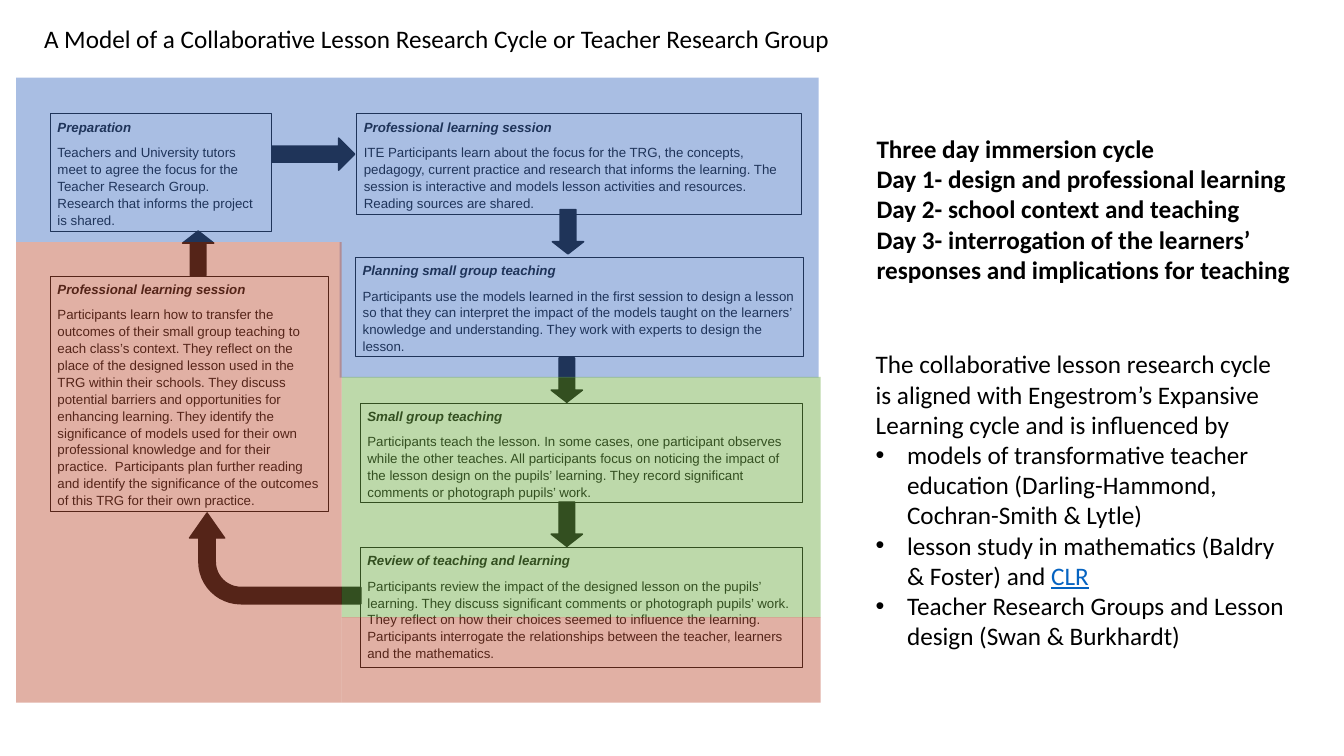
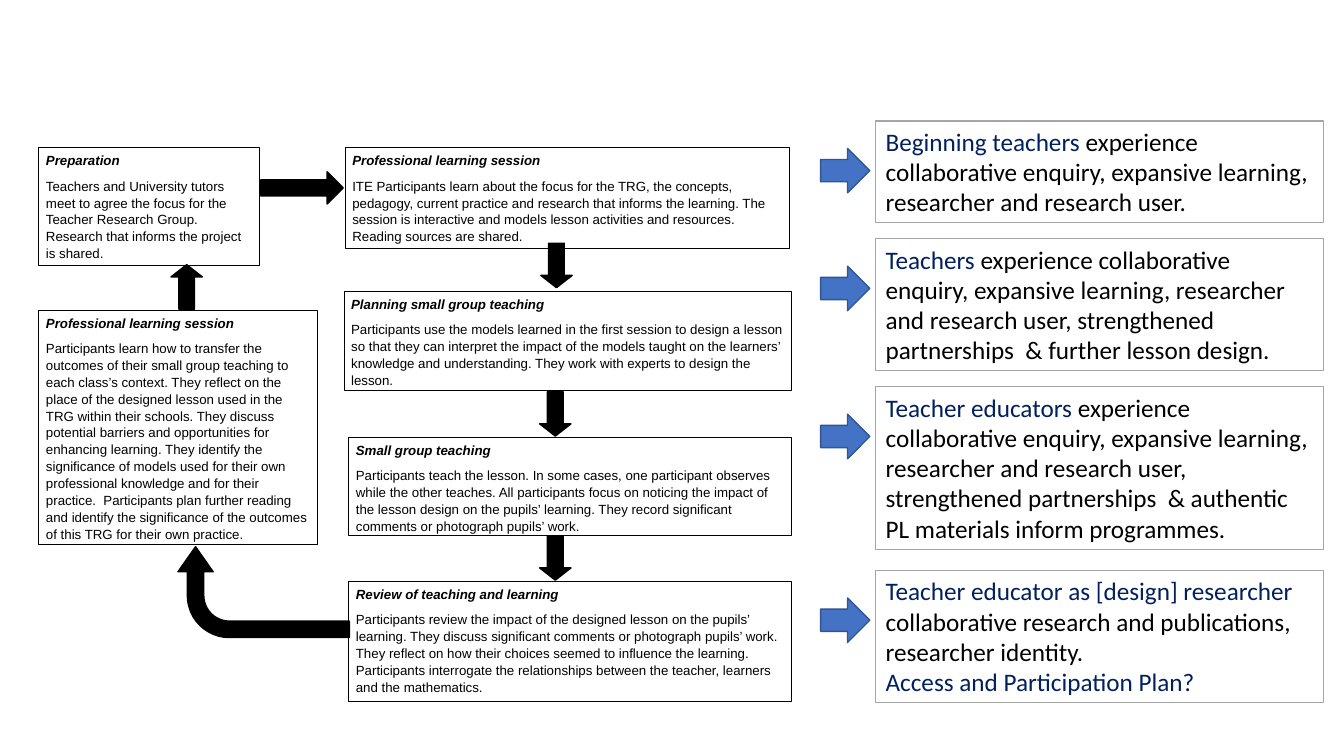
from pptx import Presentation, util as u
from pptx.dml.color import RGBColor
from pptx.enum import shapes, text
from pptx.oxml.ns import qn
from lxml import etree

Cm, Pt = u.Cm, u.Pt
SHAPE = shapes.MSO_SHAPE

COLORS = {
    "ink": "000000", "paper": "FFFFFF", "blue": "4472C4", "green": "70AD47",
    "red": "BD5137", "arrow_edge": "325491", "frame": "A6A6A6",
    "navy": "002060", "link": "0563C1",
}

SESSION = "Professional learning session"
STEPS = [
    ((0, 0, 5.56, 2.97), "Preparation",
     "Teachers and University tutors meet to agree the focus for the Teacher Research "
     "Group. Research that informs the project is shared."),
    ((7.72, 0, 11.2, 2.54), SESSION,
     "ITE Participants learn about the focus for the TRG, the concepts, pedagogy, current "
     "practice and research that informs the learning. The session is interactive and "
     "models lesson activities and resources. Reading sources are shared."),
    ((7.69, 3.62, 11.28, 2.49), "Planning small group teaching",
     "Participants use the models learned in the first session to design a lesson so that "
     "they can interpret the impact of the models taught on the learners’ knowledge and "
     "understanding. They work with experts to design the lesson."),
    ((7.81, 7.29, 11.15, 2.49), "Small group teaching",
     "Participants teach the lesson. In some cases, one participant observes while the "
     "other teaches. All participants focus on noticing the impact of the lesson design on "
     "the pupils’ learning. They record significant comments or photograph pupils’ work."),
    ((7.81, 10.93, 11.15, 3.02), "Review of teaching and learning",
     "Participants review the impact of the designed lesson on the pupils’ learning. They "
     "discuss significant comments or photograph pupils’ work.  They reflect on how their "
     "choices seemed to influence the learning. Participants interrogate the relationships "
     "between the teacher, learners and the mathematics."),
    ((0, 4.09, 7.01, 5.92), SESSION,
     "Participants learn how to transfer the outcomes of their small group teaching to each "
     "class’s context. They reflect on the place of the designed lesson used in the TRG "
     "within their schools. They discuss potential barriers and opportunities for enhancing "
     "learning. They identify the significance of models used for their own professional "
     "knowledge and for their practice.  Participants plan further reading and identify the "
     "significance of the outcomes of this TRG for their own practice."),
]

HEAD = (0.5, 0.391)
CYCLE_ARROWS = [
    (SHAPE.RIGHT_ARROW, (5.59, 0.61, 2.08, 0.81), (), 0),
    (SHAPE.DOWN_ARROW, (12.65, 2.41, 0.79, 1.12), HEAD, 0),
    (SHAPE.DOWN_ARROW, (12.62, 6.15, 0.79, 1.12), HEAD, 0),
    (SHAPE.DOWN_ARROW, (12.62, 9.78, 0.79, 1.12), HEAD, 0),
    (SHAPE.UP_ARROW, (3.33, 2.95, 0.79, 1.12), HEAD, 0),
    (SHAPE.BENT_ARROW, (4.52, 9.04, 2.29, 4.32), (0.181, 0.194, 0.276, 0.463), 270),
]

BANDS = [
    ((0.41, 1.96, 20.22, 4.14), "blue", 46),
    ((8.56, 6.1, 12.07, 3.42), "blue", 46),
    ((8.61, 9.5, 12.07, 6.06), "green", 46),
    ((8.61, 15.55, 12.07, 2.16), "red", 45),
    ((0.41, 6.1, 8.2, 11.61), "red", 45),
]

DAYS = [
    "Three day immersion cycle",
    "Day 1- design and professional learning",
    "Day 2- school context and teaching",
    "Day 3- interrogation of the learners’ responses and implications for teaching",
]
INTRO = ("The collaborative lesson research cycle is aligned with Engestrom’s Expansive "
         "Learning cycle and is influenced by")
INFLUENCES = [
    [("models of transformative teacher education (Darling-Hammond, "
      "Cochran-Smith & Lytle)", "ink")],
    [("lesson study in mathematics (Baldry & Foster) and ", "ink"), ("CLR", "link")],
    [("Teacher Research Groups and Lesson design (Swan & Burkhardt)", "ink")],
]

OUTCOMES = [
    (3.05, 2.57, [[("Beginning teachers ", "navy"),
                   ("experience collaborative enquiry, expansive learning, researcher and "
                    "research user.", "ink")]]),
    (6.02, 3.33, [[("Teachers", "navy"),
                   (" experience collaborative enquiry, expansive learning, researcher and "
                    "research user, strengthened partnerships  & further lesson design.",
                    "ink")]]),
    (9.75, 4.11, [[("Teacher educators ", "navy"),
                   ("experience collaborative enquiry, expansive learning, researcher and "
                    "research user, strengthened partnerships  & authentic PL materials "
                    "inform programmes.", "ink")]]),
    (14.38, 3.33, [[("Teacher educator as [design] researcher ", "navy"),
                    ("collaborative research and publications, researcher identity.", "ink")],
                   [("Access and Participation Plan?", "navy")]]),
]


def rgb(name):
    return RGBColor.from_string(COLORS[name])


def lengths(box):
    return [Cm(v) for v in box]


class Deck:
    def __init__(self):
        self.prs = Presentation()
        self.prs.slide_width, self.prs.slide_height = Cm(33.87), Cm(19.05)
        self.s = None

    def slide(self):
        self.s = self.prs.slides.add_slide(self.prs.slide_layouts[6])

    def shape(self, kind, box, fill=None, line=None, width=1, adj=(), alpha=None):
        sp = self.s.shapes.add_shape(kind, *lengths(box))
        sp.shadow.inherit = False
        for i, value in enumerate(adj):
            sp.adjustments[i] = value
        if fill:
            sp.fill.solid()
            sp.fill.fore_color.rgb = rgb(fill)
        else:
            sp.fill.background()
        if line:
            sp.line.color.rgb = rgb(line)
            sp.line.width = Pt(width)
        else:
            sp.line.fill.background()
        if alpha:
            clr = sp.fill._xPr.find(qn("a:solidFill"))[0]
            etree.SubElement(clr, qn("a:alpha")).set("val", str(alpha * 1000))
        return sp

    def paragraph(self, tf, i, runs, size=18, font="Calibri", bold=False, italic=False):
        p = tf.paragraphs[0] if i == 0 else tf.add_paragraph()
        p.alignment = text.PP_ALIGN.LEFT
        p.font.size, p.font.name = Pt(size), font
        p.font.bold, p.font.italic = bold, italic
        if len(runs) == 1:
            p.font.color.rgb = rgb(runs[0][1])
        for words, color in runs:
            r = p.add_run()
            r.text = words
            if len(runs) > 1:
                r.font.color.rgb = rgb(color)
            if color == "link":
                r.font.underline = True
        return p

    def bullet(self, p):
        pPr = p._p.get_or_add_pPr()
        pPr.set("marL", str(Cm(0.79)))
        pPr.set("indent", str(-Cm(0.79)))
        font, char = (etree.Element(qn(tag)) for tag in ("a:buFont", "a:buChar"))
        font.set("typeface", "Arial")
        char.set("char", "•")
        pPr.find(qn("a:defRPr")).addprevious(font)
        font.addnext(char)

    def frame(self, sp):
        tf = sp.text_frame
        tf.word_wrap = True
        tf.vertical_anchor = text.MSO_ANCHOR.TOP
        return tf

    def prose(self, sp, paragraphs, bold=False, bullets_from=None):
        tf = self.frame(sp)
        tf.auto_size = text.MSO_AUTO_SIZE.SHAPE_TO_FIT_TEXT
        for i, runs in enumerate(paragraphs):
            p = self.paragraph(tf, i, runs, bold=bold)
            if bullets_from is not None and i >= bullets_from:
                self.bullet(p)

    def textbox(self, box, paragraphs, **style):
        self.prose(self.s.shapes.add_textbox(*lengths(box)), paragraphs, **style)

    def step(self, box, title, body):
        tf = self.frame(self.shape(SHAPE.RECTANGLE, box, "paper", "ink", 0.5))
        tf.margin_left = tf.margin_right = Cm(0.18)
        tf.margin_top = tf.margin_bottom = Cm(0.1)
        for i, words in enumerate((title, body)):
            p = self.paragraph(tf, i, [(words, "ink")], 9.5, "Arial", i == 0, i == 0)
            p.line_spacing, p.space_after = 1.06, Pt(6)

    def cycle(self, left, top):
        def place(box):
            x, y, w, h = box
            return left + x, top + y, w, h

        for box, title, body in STEPS:
            self.step(place(box), title, body)
        for kind, box, adj, turn in CYCLE_ARROWS:
            self.shape(kind, place(box), "ink", "ink", adj=adj).rotation = turn

    def outcome(self, top, height, paragraphs):
        self.shape(SHAPE.RIGHT_ARROW, (20.68, top + 0.69, 1.24, 1.12), "blue", "arrow_edge")
        sp = self.shape(SHAPE.RECTANGLE, (22.07, top, 11.28, height), None, "frame", 0.75)
        self.prose(sp, paragraphs)


def main():
    deck = Deck()

    deck.slide()
    deck.cycle(1.27, 2.87)
    deck.textbox((21.82, 8.66, 10.82, 7.95), [[(INTRO, "ink")]] + INFLUENCES, bullets_from=1)
    deck.textbox((0.86, 0.46, 23.14, 1.02), [[(
        "A Model of a Collaborative Lesson Research Cycle or Teacher Research Group", "ink")]])
    for box, color, alpha in BANDS:
        deck.shape(SHAPE.RECTANGLE, box, color, alpha=alpha)
    deck.textbox((21.84, 3.23, 11.61, 4.11), [[(day, "ink")] for day in DAYS], bold=True)

    deck.slide()
    deck.cycle(0.98, 3.72)
    for top, height, paragraphs in OUTCOMES:
        deck.outcome(top, height, paragraphs)

    deck.prs.save("out.pptx")


if __name__ == "__main__":
    main()
